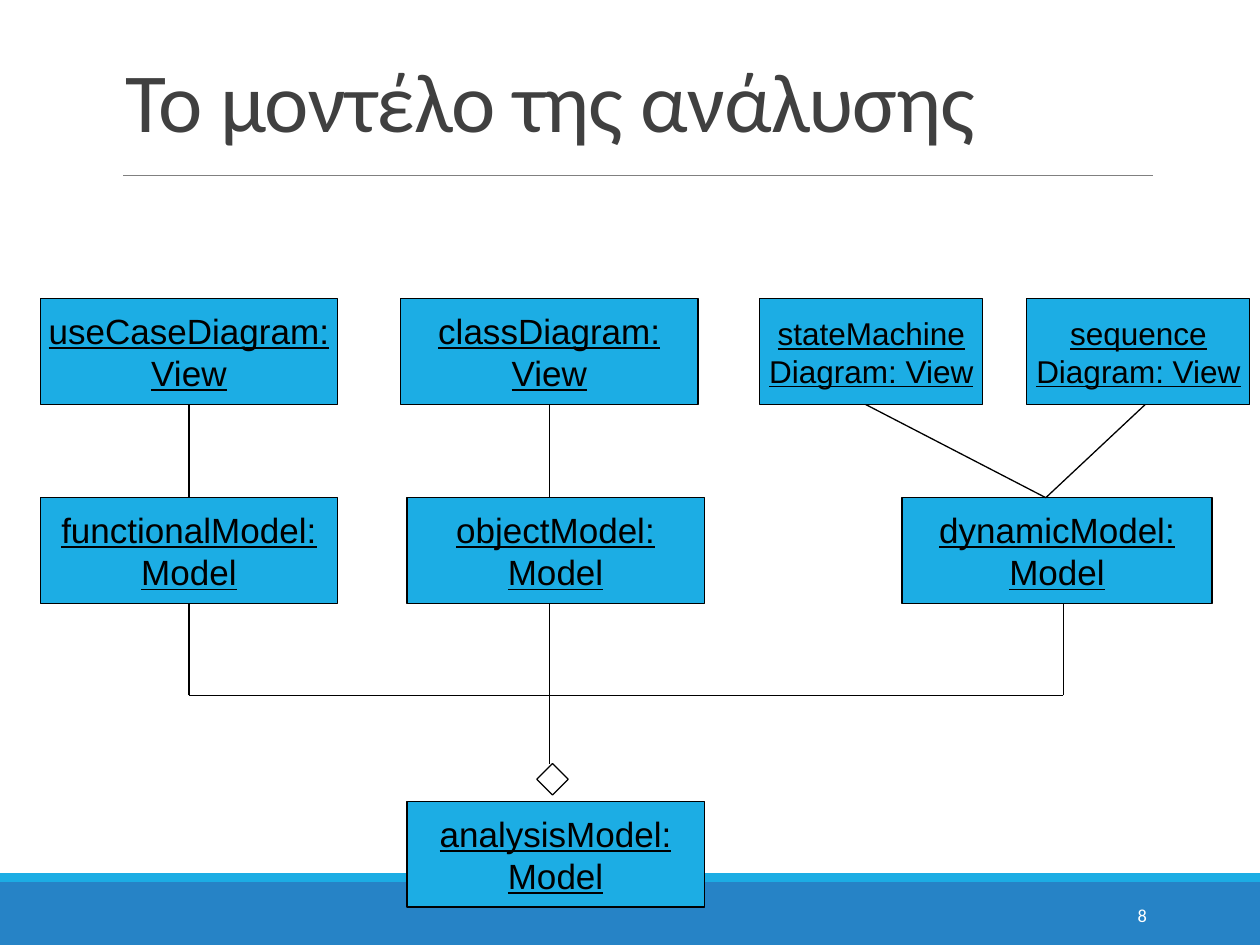
import pptx
import pptx.dml.color
import pptx.enum.shapes
import pptx.enum.text
import pptx.oxml.ns
import pptx.util
from lxml import etree

Inches, Pt = pptx.util.Inches, pptx.util.Pt
SHAPE = pptx.enum.shapes.MSO_SHAPE
ALIGN = pptx.enum.text.PP_ALIGN
ANCHOR = pptx.enum.text.MSO_ANCHOR

SLIDE_W, SLIDE_H = 10, 7.5
COLORS = {
    "band": "2683C6",
    "node": "1CADE4",
    "ink": "000000",
    "rule": "808080",
    "title": "404040",
    "number": "FFFFFF",
}

# Diagram grid, in inches
NODE_W, NODE_H = 2.36, 0.84
SMALL_W, DYNAMIC_W = 1.77, 2.46
VIEW_ROW, MODEL_ROW, ANALYSIS_ROW = 2.37, 3.95, 6.36
VIEW_BOTTOM, MODEL_BOTTOM = VIEW_ROW + NODE_H, MODEL_ROW + NODE_H
FUNCTIONAL_COL, CLASS_COL, OBJECT_COL = 0.32, 3.18, 3.23
STATE_COL, SEQUENCE_COL, DYNAMIC_COL = 6.03, 8.15, 7.16
FUNCTIONAL_AXIS = FUNCTIONAL_COL + NODE_W / 2
OBJECT_AXIS = CLASS_COL + NODE_W / 2
DYNAMIC_AXIS, DYNAMIC_TOP = 8.44, 8.3
BUS_Y, DIAMOND_Y, DIAMOND_SIZE = 5.52, 6.06, 0.25

# Label, left, top, width, font size, side inset
NODES = [
    ("functionalModel: Model", FUNCTIONAL_COL, MODEL_ROW, NODE_W, 20, 0.02),
    ("analysisModel: Model", OBJECT_COL, ANALYSIS_ROW, NODE_W, 20, 0.02),
    ("objectModel: Model", OBJECT_COL, MODEL_ROW, NODE_W, 20, 0.02),
    ("dynamicModel: Model", DYNAMIC_COL, MODEL_ROW, DYNAMIC_W, 20, 0.1),
    ("useCaseDiagram: View", FUNCTIONAL_COL, VIEW_ROW, NODE_W, 20, 0.02),
    ("classDiagram: View", CLASS_COL, VIEW_ROW, NODE_W, 20, 0.02),
    ("stateMachine Diagram: View", STATE_COL, VIEW_ROW, SMALL_W, 18, 0.02),
    ("sequence Diagram: View", SEQUENCE_COL, VIEW_ROW, SMALL_W, 18, 0.02),
]

LINKS = [
    ((OBJECT_AXIS, DIAMOND_Y), (OBJECT_AXIS, MODEL_BOTTOM)),
    ((FUNCTIONAL_AXIS, BUS_Y), (DYNAMIC_AXIS, BUS_Y)),
    ((DYNAMIC_AXIS, BUS_Y), (DYNAMIC_AXIS, MODEL_BOTTOM)),
    ((FUNCTIONAL_AXIS, BUS_Y), (FUNCTIONAL_AXIS, MODEL_BOTTOM)),
    ((FUNCTIONAL_AXIS, MODEL_ROW), (FUNCTIONAL_AXIS, VIEW_BOTTOM)),
    ((OBJECT_AXIS, MODEL_ROW), (OBJECT_AXIS, VIEW_BOTTOM)),
    ((DYNAMIC_TOP, MODEL_ROW), (6.87, VIEW_BOTTOM)),
    ((DYNAMIC_TOP, MODEL_ROW), (9.09, VIEW_BOTTOM)),
]


def rgb(color):
    return pptx.dml.color.RGBColor.from_string(COLORS[color])


def add_block(slide, kind, box, fill=None, outline=None):
    block = slide.shapes.add_shape(kind, *map(Inches, box))
    block.shadow.inherit = False
    if fill:
        block.fill.solid()
        block.fill.fore_color.rgb = rgb(fill)
    else:
        block.fill.background()
    if outline:
        block.line.color.rgb = rgb(outline)
        block.line.width = Pt(0.75)
    else:
        block.line.fill.background()
    return block


def write(holder, text, size, font, color, align, anchor, side_inset=0.1):
    """Fill a shape's text frame with one paragraph and return it."""
    frame = holder.text_frame
    frame.word_wrap = True
    frame.vertical_anchor = anchor
    frame.margin_left = frame.margin_right = Inches(side_inset)
    paragraph = frame.paragraphs[0]
    paragraph.text = text
    paragraph.alignment = align
    paragraph.font.size = Pt(size)
    paragraph.font.name = font
    paragraph.font.color.rgb = rgb(color)
    return paragraph


def add_node(slide, label, left, top, width, size, side_inset):
    node = add_block(slide, SHAPE.RECTANGLE, (left, top, width, NODE_H), "node", "ink")
    paragraph = write(node, label, size, "Arial", "ink", ALIGN.CENTER,
                      ANCHOR.MIDDLE, side_inset)
    paragraph.font.underline = True


def add_link(slide, start, end, color="ink", width=0.75):
    link = slide.shapes.add_connector(
        pptx.enum.shapes.MSO_CONNECTOR.STRAIGHT, *map(Inches, start + end))
    link.line.color.rgb = rgb(color)
    link.line.width = Pt(width)
    etree.SubElement(link._element.spPr, pptx.oxml.ns.qn("a:effectLst"))


def add_title(slide, text):
    title = slide.shapes.add_textbox(*map(Inches, (0.9, 0.31, 8.25, 0.93)))
    paragraph = write(title, text, 48, "Calibri", "title", ALIGN.LEFT, ANCHOR.BOTTOM)
    paragraph.line_spacing = 0.85
    # Letter spacing in hundredths of a point
    paragraph.runs[0]._r.get_or_add_rPr().set("spc", "-50")


def add_page_frame(slide):
    """Draw the footer bands and the rule under the title."""
    band_top = 7
    add_block(slide, SHAPE.RECTANGLE, (0, band_top, SLIDE_W, SLIDE_H - band_top), "band")
    add_block(slide, SHAPE.RECTANGLE, (0, band_top - 0.07, SLIDE_W, 0.07), "node")
    add_link(slide, (0.98, 1.39), (9.15, 1.39), "rule", 0.5)


def add_page_number(slide, number):
    holder = slide.shapes.add_textbox(*map(Inches, (8.12, 7.06, 1.08, 0.4)))
    write(holder, number, 10.5, "Calibri", "number", ALIGN.RIGHT, ANCHOR.MIDDLE)


def main():
    deck = pptx.Presentation()
    deck.slide_width, deck.slide_height = Inches(SLIDE_W), Inches(SLIDE_H)
    slide = deck.slides.add_slide(deck.slide_layouts[6])

    add_page_frame(slide)
    add_title(slide, "Το μοντέλο της ανάλυσης")
    add_page_number(slide, "8")
    for node in NODES:
        add_node(slide, *node)
    add_block(slide, SHAPE.DIAMOND, (4.26, DIAMOND_Y, DIAMOND_SIZE, DIAMOND_SIZE),
              outline="ink")
    for start, end in LINKS:
        add_link(slide, start, end)

    deck.save("out.pptx")


if __name__ == "__main__":
    main()
